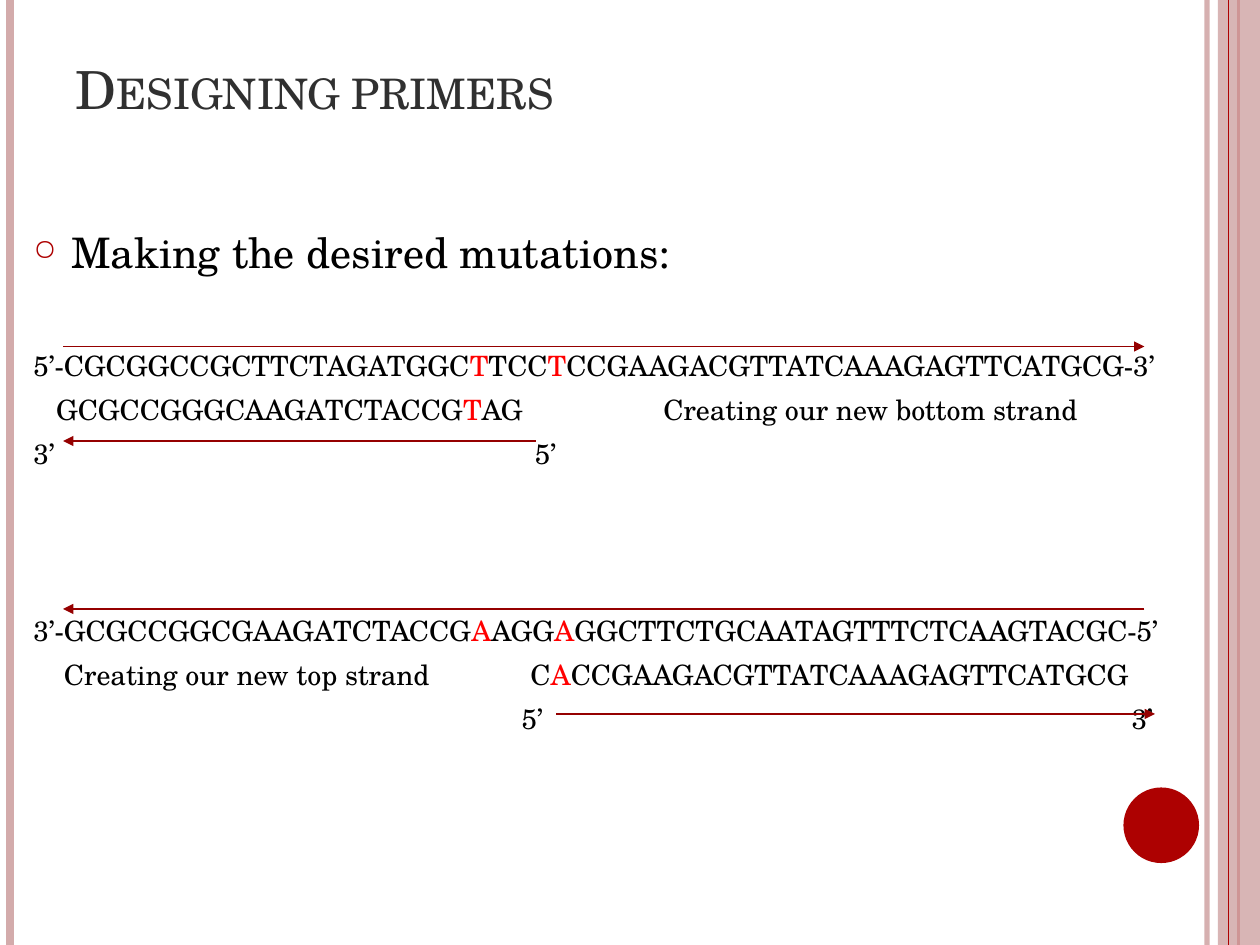
from dataclasses import dataclass

from lxml import etree
from pptx import Presentation
from pptx.dml.color import RGBColor
from pptx.enum.shapes import MSO_CONNECTOR, MSO_SHAPE
from pptx.enum.text import MSO_ANCHOR
from pptx.oxml.ns import qn
from pptx.util import Pt

LINE = MSO_CONNECTOR.STRAIGHT
RECT, OVAL = MSO_SHAPE.RECTANGLE, MSO_SHAPE.OVAL
TOP, BOTTOM = MSO_ANCHOR.TOP, MSO_ANCHOR.BOTTOM
WIDE, HIGH = 720, 540


@dataclass(frozen=True)
class Theme:
    font: str = "TeX Gyre Schola"
    ink: str = "000000"
    head: str = "303030"
    mark: str = "FF0000"
    red: str = "AD0101"
    pink: str = "D3ABAB"
    arrow: str = "950000"
    big: int = 30
    mid: int = 24
    small: int = 16


THEME = Theme()

# Vertical rules: x, colour, width, opacity in percent
RULES = [
    (689.76, THEME.pink, 3, 93),
    (5.76, THEME.pink, 4.5, 100),
    (707.76, THEME.red, 1.5, 100),
]

# Strand rows: space before, tab stops, text with mutated bases between bars
ROWS = [
    (40.8, [], "5’-CGCGGCCGCTTCTAGATGGC|T|TCC|T|CCGAAGACGTTATCAAAGAGTTCATGCG-3’"),
    (6, [13, 360], "\tGCGCCGGGCAAGATCTACCG|T|AG\tCreating our new bottom strand"),
    (6, [286.5], "3’\t5’"),
    (81.6, [], "3’-GCGCCGGCGAAGATCTACCG|A|AGG|A|GGCTTCTGCAATAGTTTCTCAAGTACGC-5’"),
    (6, [17.5, 284], "\tCreating our new top strand\tC|A|CCGAAGACGTTATCAAAGAGTTCATGCG"),
    (6, [279, 627.5], "\t5’\t3’"),
]

# Strand arrows: start x, end x, y
ARROWS = [(306, 36, 252), (318, 660, 408), (36, 654, 198), (654, 36, 348)]


def rgb(code):
    return RGBColor.from_string(code)


def style(item, **values):
    for name, value in values.items():
        setattr(item, name, value)


def node(parent, tag, **values):
    return etree.SubElement(parent, qn(tag), values)


def fade(part, pct):
    """Set the opacity of the solid colour inside a shape's properties."""
    if pct < 100:
        color = next(part.iter(qn("a:srgbClr")))
        node(color, "a:alpha", val=str(pct * 1000))


def line(slide, start, end, color, width, pct=100, arrow=False):
    shape = slide.shapes.add_connector(LINE, *map(Pt, start + end))
    shape.line.width = Pt(width)
    shape.line.color.rgb = rgb(color)
    props = shape._element.spPr
    fade(props, pct)
    if arrow:
        node(props.find(qn("a:ln")), "a:tailEnd", type="triangle")
    node(props, "a:effectLst")


def block(slide, kind, area, color, pct=100):
    shape = slide.shapes.add_shape(kind, *map(Pt, area))
    shape.shadow.inherit = False
    shape.fill.solid()
    shape.fill.fore_color.rgb = rgb(color)
    shape.line.fill.background()
    fade(shape._element.spPr, pct)


def frame(slide, area, anchor):
    box = slide.shapes.add_textbox(*map(Pt, area)).text_frame
    style(box, word_wrap=True, vertical_anchor=anchor)
    return box


def write(para, text, size, color):
    """Add runs; every second part between bars takes the mark colour."""
    for pos, part in enumerate(text.split("|")):
        run = para.add_run()
        run.text = part
        style(run.font, name=THEME.font, size=Pt(size))
        run.font.color.rgb = rgb(THEME.mark if pos % 2 else color)


def bullet(para):
    props = para._p.get_or_add_pPr()
    props.set("marL", str(Pt(21.6)))
    props.set("indent", str(-Pt(21.6)))
    node(node(props, "a:buClr"), "a:srgbClr", val=THEME.red)
    node(props, "a:buSzPct", val="70000")
    node(props, "a:buChar", char="○")


def tabs(para, stops):
    if stops:
        group = node(para._p.get_or_add_pPr(), "a:tabLst")
        for stop in stops:
            node(group, "a:tab", pos=str(Pt(stop)), algn="l")


def title(slide):
    para = frame(slide, (36, 0, 588, 72), BOTTOM).paragraphs[0]
    write(para, "Designing primers", THEME.big, THEME.head)
    para.runs[0].font._element.set("cap", "small")


def body(slide):
    box = frame(slide, (12, 126, 666, 384), TOP)
    para = box.paragraphs[0]
    bullet(para)
    write(para, "Making the desired mutations:", THEME.mid, THEME.ink)
    for gap, stops, text in ROWS:
        para = box.add_paragraph()
        tabs(para, stops)
        para.space_before = Pt(gap)
        write(para, text, THEME.small, THEME.ink)


def main():
    deck = Presentation()
    style(deck, slide_width=Pt(WIDE), slide_height=Pt(HIGH))
    slide = deck.slides.add_slide(deck.slide_layouts[6])

    # Side decoration
    for x, color, width, pct in RULES:
        line(slide, (x, 0), (x, HIGH), color, width, pct)
    block(slide, RECT, (696, 0, 24, HIGH), THEME.pink, 87)
    line(slide, (702, 0), (702, HIGH), THEME.red, 0.75)
    block(slide, OVAL, (642, 450, 43.2, 43.2), THEME.red)

    # Text
    title(slide)
    body(slide)

    # Strand directions
    for start, end, y in ARROWS:
        line(slide, (start, y), (end, y), THEME.arrow, 1, arrow=True)

    deck.save("out.pptx")


if __name__ == "__main__":
    main()
